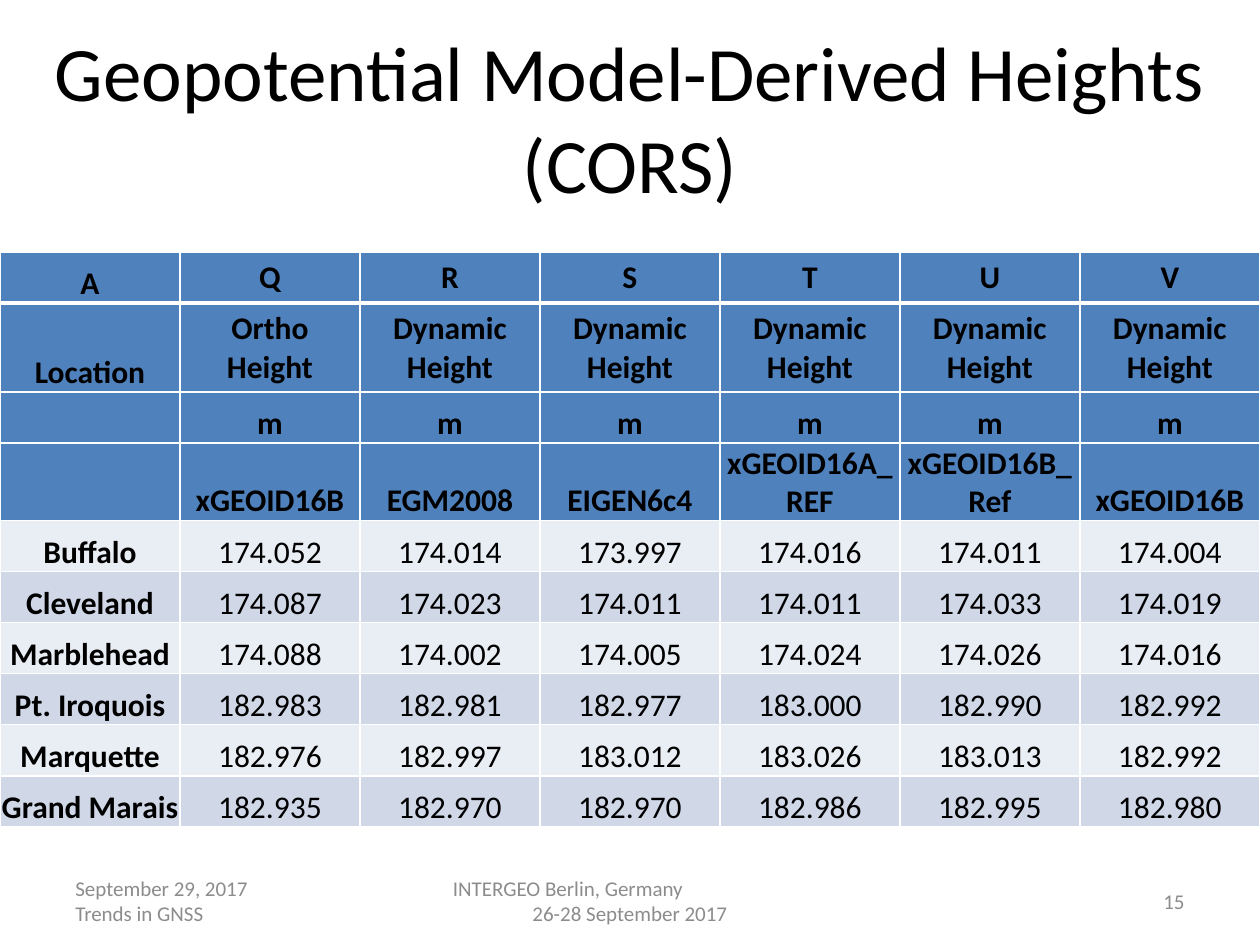
import pptx
import pptx.util
import pptx.dml.color
import pptx.enum.text
import pptx.oxml
import pptx.oxml.ns

Cm = pptx.util.Cm
Pt = pptx.util.Pt
ALIGN = pptx.enum.text.PP_ALIGN
ANCHOR = pptx.enum.text.MSO_ANCHOR


def rgb(value):
    return pptx.dml.color.RGBColor.from_string(value)


def write(p, text, align, color, **fmt):
    p.alignment = align
    r = p.add_run()
    r.text = text
    r.font.color.rgb = rgb(color)
    for name, value in {"name": "Calibri", **fmt}.items():
        setattr(r.font, name, value)


prs = pptx.Presentation()
prs.slide_width, prs.slide_height = Cm(25.4), Cm(19.05)
s = prs.slides.add_slide(prs.slide_layouts[6])

# Title and footer: left, top, width, height, size, colour, lines
boxes = [
    (0, 0.76, 25.4, 3.18, 44, "000000",
     [("Geopotential Model-Derived Heights (CORS)", ALIGN.CENTER, 0)]),
    (1.27, 17.65, 5.93, 1.02, 12, "8C8C8C",
     [("September 29, 2017", ALIGN.LEFT, 0), ("Trends in GNSS", ALIGN.LEFT, 0)]),
    (8.68, 17.65, 8.04, 1.02, 12, "8C8C8C",
     [("INTERGEO Berlin, Germany", ALIGN.LEFT, 0.2),
      ("26-28 September 2017", ALIGN.CENTER, 0)]),
    (18.2, 17.65, 5.93, 1.02, 12, "8C8C8C", [("15", ALIGN.RIGHT, 0)]),
]
for left, top, width, height, size, color, lines in boxes:
    sp = s.shapes.add_textbox(Cm(left), Cm(top), Cm(width), Cm(height))
    tf = sp.text_frame
    tf.word_wrap = True
    tf.vertical_anchor = ANCHOR.MIDDLE
    for i, (text, align, indent) in enumerate(lines):
        p = tf.add_paragraph() if i else tf.paragraphs[0]
        write(p, text, align, color, size=Pt(size))
        if indent:
            p._p.get_or_add_pPr().set("marL", str(Cm(indent)))

# Table data: four header rows, then one row per station
rows = [
    ["A", "Q", "R", "S", "T", "U", "V"],
    ["Location", "Ortho Height"] + ["Dynamic Height"] * 5,
    [""] + ["m"] * 6,
    ["", "xGEOID16B", "EGM2008", "EIGEN6c4", "xGEOID16A_REF", "xGEOID16B_Ref", "xGEOID16B"],
    ["Buffalo", "174.052", "174.014", "173.997", "174.016", "174.011", "174.004"],
    ["Cleveland", "174.087", "174.023", "174.011", "174.011", "174.033", "174.019"],
    ["Marblehead", "174.088", "174.002", "174.005", "174.024", "174.026", "174.016"],
    ["Pt. Iroquois", "182.983", "182.981", "182.977", "183.000", "182.990", "182.992"],
    ["Marquette", "182.976", "182.997", "183.012", "183.026", "183.013", "182.992"],
    ["Grand Marais", "182.935", "182.970", "182.970", "182.986", "182.995", "182.980"],
]
header_rows = 4
heights = [1.03, 1.79, 1.03, 1.56] + [1.03] * 6
tight = {"margin_left": Cm(0.03), "margin_right": Cm(0.03), "margin_top": Cm(0.03),
         "margin_bottom": 0, "vertical_anchor": ANCHOR.BOTTOM}
roomy = {"margin_left": Cm(0.25), "margin_right": Cm(0.25), "margin_top": Cm(0.13),
         "margin_bottom": Cm(0.13), "vertical_anchor": ANCHOR.TOP}

table = s.shapes.add_table(len(rows), len(rows[0]), 0, Cm(5.08),
                           prs.slide_width, Cm(sum(heights))).table
for column in table.columns:
    column.width = prs.slide_width // len(rows[0])

for i, row in enumerate(rows):
    table.rows[i].height = Cm(heights[i])
    is_header = i < header_rows
    fill = "4F81BD" if is_header else ("E9EDF4", "D0D8E8")[i % 2]
    for j, text in enumerate(row):
        cell = table.cell(i, j)
        for name, value in (roomy if i < 2 and j else tight).items():
            setattr(cell, name, value)
        cell.fill.solid()
        cell.fill.fore_color.rgb = rgb(fill)
        if text:
            write(cell.text_frame.paragraphs[0], text, ALIGN.CENTER, "000000",
                  size=Pt(18), bold=is_header or j == 0)
        # White borders, heavier under the first row
        tcPr = cell._tc.get_or_add_tcPr()
        for k, side in enumerate("LRTB"):
            heavy = (i, side) in ((0, "B"), (1, "T"))
            tcPr.insert(k, pptx.oxml.parse_xml(
                f'<a:ln{side} {pptx.oxml.ns.nsdecls("a")} w="{Pt(3 if heavy else 1)}">'
                f'<a:solidFill><a:srgbClr val="FFFFFF"/></a:solidFill></a:ln{side}>'))

prs.save("out.pptx")
